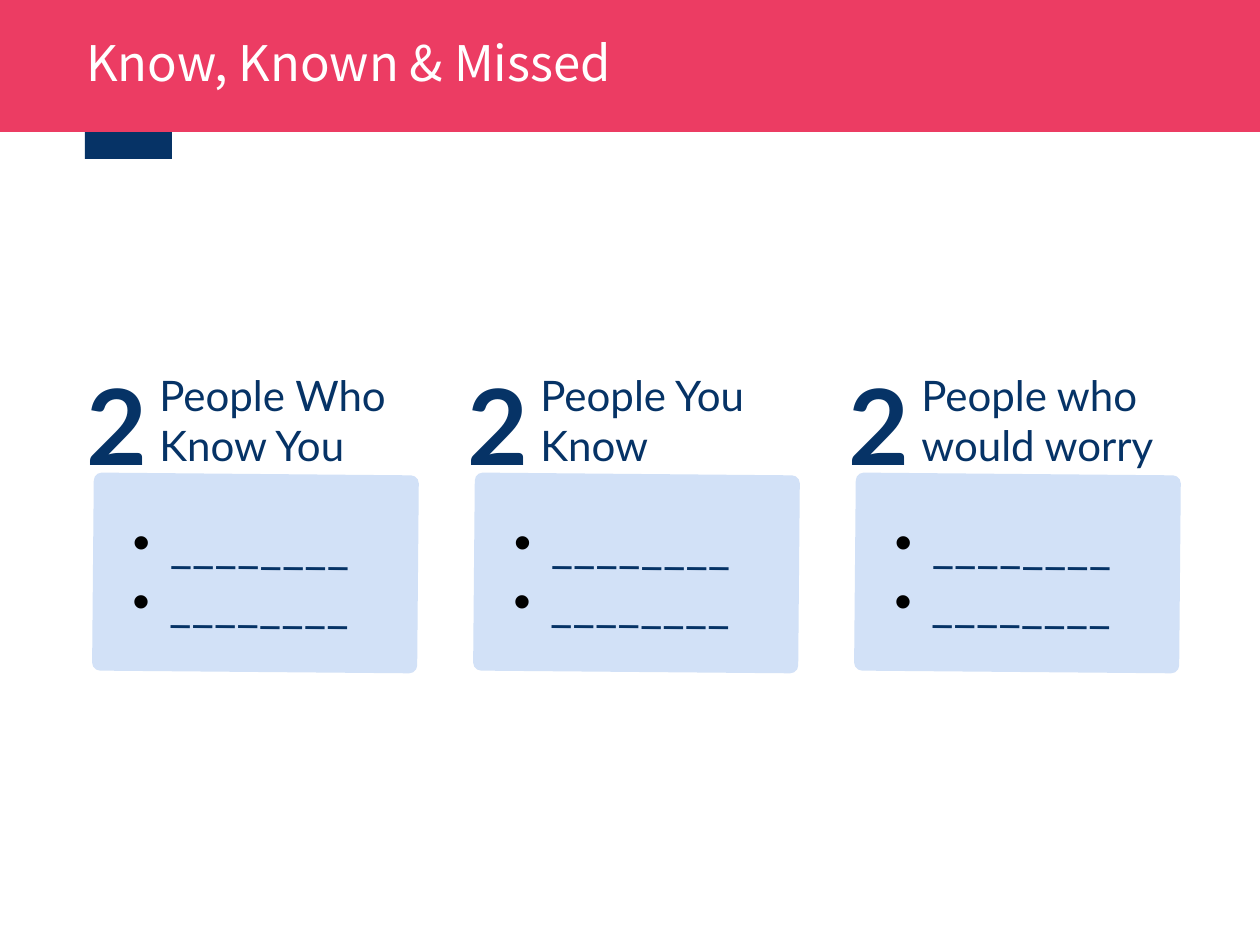
import dataclasses
import typing

import pptx
import pptx.dml.color
import pptx.enum.shapes
import pptx.enum.text
import pptx.oxml
import pptx.oxml.ns
import pptx.util

Shape = pptx.enum.shapes.MSO_SHAPE
Align = pptx.enum.text.PP_ALIGN
Anchor = pptx.enum.text.MSO_ANCHOR
AutoSize = pptx.enum.text.MSO_AUTO_SIZE
EMU_PER_PX = 914400 / 126


@dataclasses.dataclass(frozen=True)
class Theme:
    banner: str = "EC3C63"
    navy: str = "063366"
    card: str = "D2E1F7"
    bullet: str = "000000"
    white: str = "FFFFFF"
    title_font: str = "Noto Sans CJK KR"
    body_font: str = "Lato"
    title_size: int = 28
    label_size: int = 24
    count_size: int = 60
    blank_size: int = 28


@dataclasses.dataclass(frozen=True)
class Box:
    left: int
    top: int
    width: int
    height: int

    def shifted(self, distance: int) -> "Box":
        return dataclasses.replace(self, left=self.left + distance)

    def lengths(self) -> list[pptx.util.Emu]:
        return [px(value) for value in dataclasses.astuple(self)]


@dataclasses.dataclass(frozen=True)
class Group:
    count: str
    label: str
    blanks: tuple[str, ...] = ("________", "________")


THEME = Theme()
TITLE = "Know, Known & Missed"
GROUPS = (
    Group("2", "People Who Know You"),
    Group("2", "People You Know"),
    Group("2", "People who would worry"),
)
GROUP_STEP = 381
CARD = Box(93, 474, 325, 198)
LABEL = Box(147, 363, 271, 115)
COUNT = Box(64, 354, 96, 140)
TITLE_INDENT = 74
BLANK_INDENT = 62
BULLET_HANG = 37


def px(value: int) -> pptx.util.Emu:
    return pptx.util.Emu(round(value * EMU_PER_PX))


def color(code: str) -> pptx.dml.color.RGBColor:
    return pptx.dml.color.RGBColor.from_string(code)


def apply(target: typing.Any, formats: dict[str, typing.Any]) -> None:
    for name, value in formats.items():
        setattr(target, name, value)


def add_block(page: typing.Any, kind: Shape, box: Box, fill: str) -> typing.Any:
    block = page.shapes.add_shape(kind, *box.lengths())
    block.shadow.inherit = False
    block.fill.solid()
    block.fill.fore_color.rgb = color(fill)
    block.line.fill.background()
    apply(block.text_frame, {"word_wrap": True, "vertical_anchor": Anchor.MIDDLE})
    return block


def write(para: typing.Any, text: str, ink: str, align: Align = Align.LEFT,
          **font: typing.Any) -> None:
    para.alignment = align
    span = para.add_run()
    span.text = text
    apply(span.font, font)
    span.font.color.rgb = color(ink)


def add_text(page: typing.Any, box: Box, text: str, align: Align = Align.LEFT,
             **font: typing.Any) -> None:
    frame = page.shapes.add_textbox(*box.lengths()).text_frame
    apply(frame, {"word_wrap": True, "auto_size": AutoSize.SHAPE_TO_FIT_TEXT})
    write(frame.paragraphs[0], text, THEME.navy, align, name=THEME.body_font, **font)


def add_bullet(para: typing.Any) -> None:
    settings = para._p.get_or_add_pPr()
    settings.set("marL", str(px(BLANK_INDENT)))
    settings.set("indent", str(-px(BULLET_HANG)))
    namespace = pptx.oxml.ns.nsdecls("a")
    for markup in (
        f'<a:buClr {namespace}><a:srgbClr val="{THEME.bullet}"/></a:buClr>',
        f'<a:buFont {namespace} typeface="Arial"/>',
        f'<a:buChar {namespace} char="•"/>',
    ):
        settings.append(pptx.oxml.parse_xml(markup))


def add_header(page: typing.Any) -> None:
    add_block(page, Shape.RECTANGLE, Box(85, 132, 87, 27), THEME.navy)
    banner = add_block(page, Shape.RECTANGLE, Box(0, 0, 1260, 132), THEME.banner)
    para = banner.text_frame.paragraphs[0]
    para.line_spacing = 0.9
    write(para, TITLE, THEME.white, name=THEME.title_font,
          size=pptx.util.Pt(THEME.title_size))
    para._p.get_or_add_pPr().set("marL", str(px(TITLE_INDENT)))


def add_group(page: typing.Any, group: Group, shift: int) -> None:
    card = add_block(page, Shape.ROUNDED_RECTANGLE, CARD.shifted(shift), THEME.card)
    card.adjustments[0] = 0.04
    card.rotation = 0.5
    frame = card.text_frame
    for index, blank in enumerate(group.blanks):
        para = frame.add_paragraph() if index else frame.paragraphs[0]
        write(para, blank, THEME.navy, name=THEME.body_font,
              size=pptx.util.Pt(THEME.blank_size))
        add_bullet(para)
    add_text(page, LABEL.shifted(shift), group.label,
             size=pptx.util.Pt(THEME.label_size))
    add_text(page, COUNT.shifted(shift), group.count, Align.RIGHT,
             size=pptx.util.Pt(THEME.count_size), bold=True)


def main() -> None:
    deck = pptx.Presentation()
    apply(deck, {"slide_width": px(1260), "slide_height": px(945)})
    page = deck.slides.add_slide(deck.slide_layouts[6])
    add_header(page)
    for index, group in enumerate(GROUPS):
        add_group(page, group, index * GROUP_STEP)
    deck.save("out.pptx")


if __name__ == "__main__":
    main()
